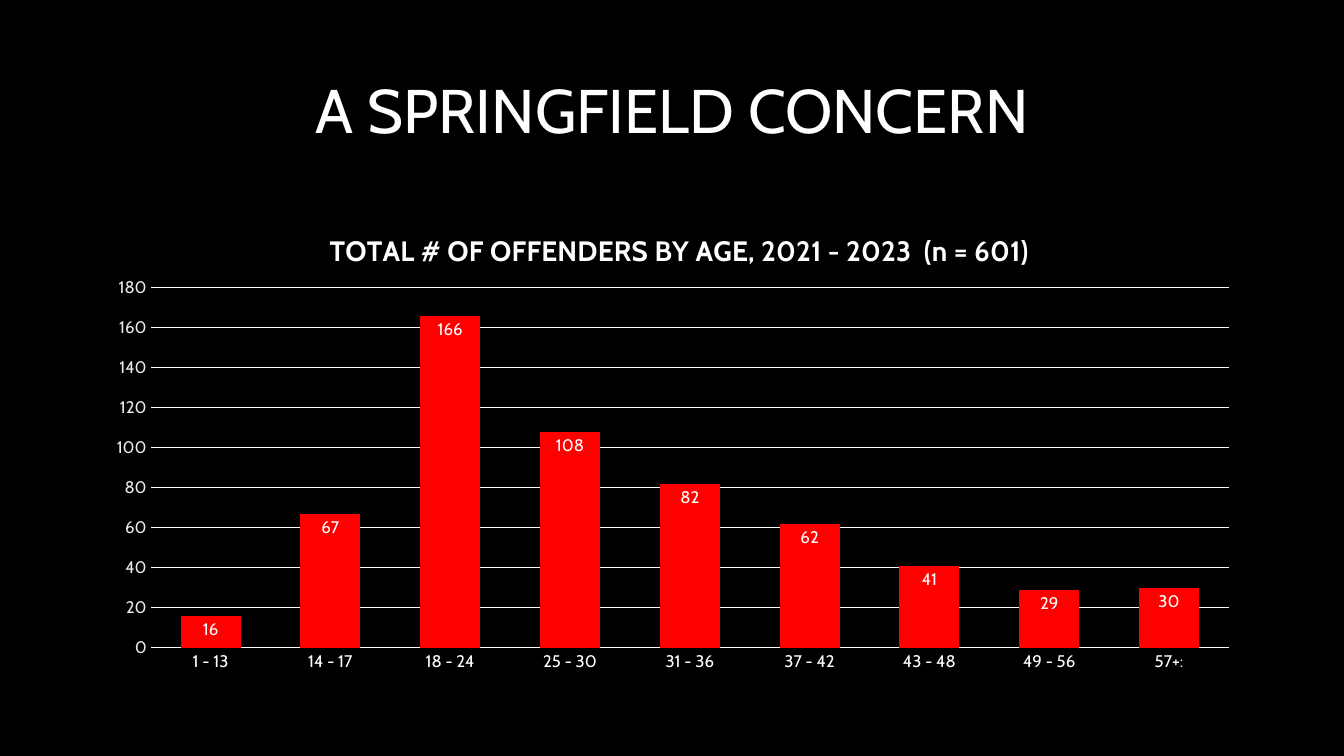
import pptx
import pptx.chart.data
import pptx.dml.color
import pptx.enum.chart
import pptx.enum.text
import pptx.oxml
import pptx.oxml.ns
import pptx.util
from pptx.util import Inches

COLORS = {"background": "000000", "text": "FFFFFF", "scale": "E8E8E8",
          "line": "FCFCFC", "bar": "FF0000"}
FONT = "Cabin"
OFFENDERS = {"1 - 13": 16, "14 - 17": 67, "18 - 24": 166, "25 - 30": 108,
             "31 - 36": 82, "37 - 42": 62, "43 - 48": 41, "49 - 56": 29,
             "57+:": 30}


def rgb(name):
    return pptx.dml.color.RGBColor.from_string(COLORS[name])


def set_font(font, size, color="text", bold=False):
    font.name = FONT
    font.size = pptx.util.Pt(size)
    font.bold = bold
    font.color.rgb = rgb(color)


def set_line(line):
    line.color.rgb = rgb("line")
    line.width = pptx.util.Pt(0.75)


def set_layout(parent, after, **values):
    old = parent.find(pptx.oxml.ns.qn("c:layout"))
    if old is not None:
        parent.remove(old)
    target = '<c:layoutTarget val="inner"/>' if "w" in values else ""
    modes = "".join(f'<c:{k}Mode val="edge"/>' for k in "xy")
    sizes = "".join(f'<c:{k} val="{v}"/>' for k, v in values.items())
    layout = pptx.oxml.parse_xml(
        f'<c:layout {pptx.oxml.ns.nsdecls("c")}><c:manualLayout>'
        f'{target}{modes}{sizes}</c:manualLayout></c:layout>')
    if after is None:
        parent.insert(0, layout)
    else:
        after.addnext(layout)


def add_title(s, text):
    sp = s.shapes.add_textbox(Inches(0.92), Inches(0.4), Inches(11.5), Inches(1.45))
    tf = sp.text_frame
    tf.word_wrap = True
    tf.vertical_anchor = pptx.enum.text.MSO_ANCHOR.MIDDLE
    p = tf.paragraphs[0]
    p.text = text
    p.alignment = pptx.enum.text.PP_ALIGN.CENTER
    p.line_spacing = 0.9
    set_font(p.font, 44)


def style_axis(axis, color):
    axis.major_tick_mark = pptx.enum.chart.XL_TICK_MARK.NONE
    axis.minor_tick_mark = pptx.enum.chart.XL_TICK_MARK.NONE
    set_font(axis.tick_labels.font, 12, color)


def add_age_chart(s, title):
    data = pptx.chart.data.CategoryChartData()
    data.categories = list(OFFENDERS)
    data.add_series("Series 1", list(OFFENDERS.values()))
    chart = s.shapes.add_chart(
        pptx.enum.chart.XL_CHART_TYPE.COLUMN_CLUSTERED,
        Inches(0.92), Inches(2), Inches(11.5), Inches(4.76), data).chart
    set_font(chart.font, 10)
    chart.has_legend = False

    tf = chart.chart_title.text_frame
    p = tf.paragraphs[0]
    p.text = title
    set_font(p.font, 20, bold=True)
    chart.chart_title.include_in_layout = False
    title_xml = chart.chart_title._element
    set_layout(title_xml, title_xml.find(pptx.oxml.ns.qn("c:tx")), x=0.2, y=0.05)
    plot_area = chart._chartSpace.chart.plotArea
    set_layout(plot_area, None, x=0.05, y=0.18, w=0.93, h=0.75)

    style_axis(chart.category_axis, "text")
    set_line(chart.category_axis.format.line)
    axis = chart.value_axis
    style_axis(axis, "scale")
    axis.minimum_scale, axis.maximum_scale, axis.major_unit = 0, 180, 20
    axis.format.line.fill.background()
    set_line(axis.major_gridlines.format.line)

    plot = chart.plots[0]
    plot.gap_width = 100
    plot.overlap = -24
    plot.vary_by_categories = False
    series = plot.series[0]
    series.format.fill.solid()
    series.format.fill.fore_color.rgb = rgb("bar")
    labels = series.data_labels
    labels.show_value = True
    labels.position = pptx.enum.chart.XL_LABEL_POSITION.INSIDE_END
    set_font(labels.font, 12)


def main():
    prs = pptx.Presentation()
    prs.slide_width, prs.slide_height = Inches(13.33), Inches(7.5)
    s = prs.slides.add_slide(prs.slide_layouts[6])
    s.background.fill.solid()
    s.background.fill.fore_color.rgb = rgb("background")
    add_title(s, "A SPRINGFIELD CONCERN")
    add_age_chart(s, "TOTAL # OF OFFENDERS BY AGE, 2021 - 2023  (n = 601)")
    prs.save("out.pptx")


if __name__ == "__main__":
    main()
